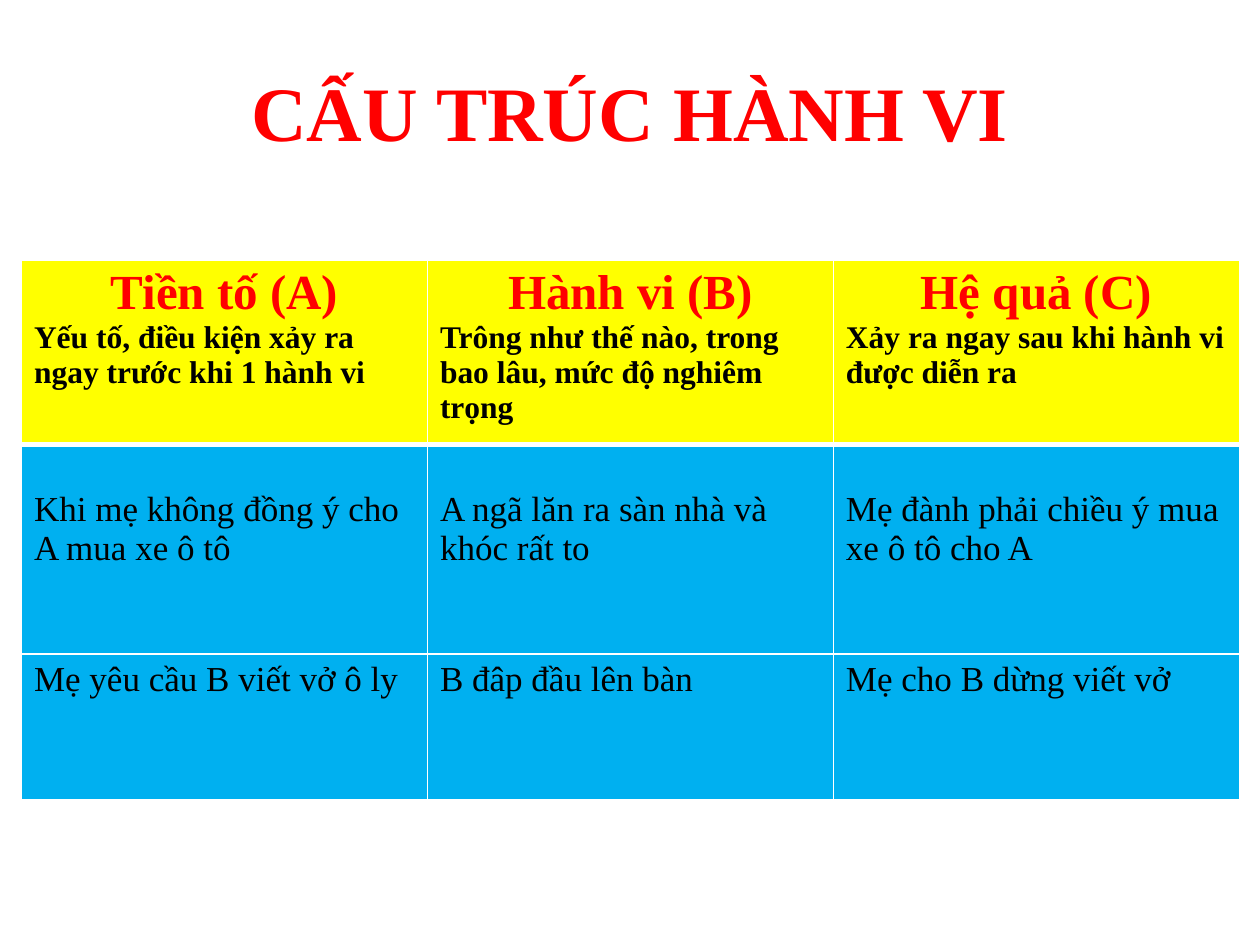
from lxml import etree
from pptx import Presentation
from pptx.dml.color import RGBColor
from pptx.enum.text import MSO_ANCHOR, PP_ALIGN
from pptx.oxml.ns import qn
from pptx.util import Pt

CENTER, LEFT = PP_ALIGN.CENTER, PP_ALIGN.LEFT
MIDDLE = MSO_ANCHOR.MIDDLE
RED, BLACK, WHITE = "FF0000", "000000", "FFFFFF"
YELLOW, BLUE = "FFFF00", "00B0F0"

HEADINGS = [
    ("Tiền tố (A)", "Yếu tố, điều kiện xảy ra ngay trước khi 1 hành vi"),
    ("Hành vi (B)", "Trông như thế nào, trong bao lâu, mức độ nghiêm trọng"),
    ("Hệ quả (C)", "Xảy ra ngay sau khi hành vi được diễn ra"),
]
EXAMPLES = [
    ["Khi mẹ không đồng ý cho A mua xe ô tô",
     "A ngã lăn ra sàn nhà và khóc rất to",
     "Mẹ đành phải chiều ý mua xe ô tô cho A"],
    ["Mẹ yêu cầu B viết vở ô ly", "B đâp đầu lên bàn", "Mẹ cho B dừng viết vở"],
]
ROW_HEIGHTS = [103.2, 119.6, 83.5]
EXAMPLE_TOP_MARGINS = [26, 3.6]


def color(value):
    return RGBColor.from_string(value)


class SlideBuilder:
    font = "Times New Roman"

    def __init__(self, slide):
        self.slide = slide

    def paragraph(self, paragraph, text, size, text_color, bold=False, align=LEFT):
        paragraph.alignment = align
        run = paragraph.add_run()
        run.text = text
        run.font.name = self.font
        run.font.size = Pt(size)
        run.font.bold = bold
        run.font.color.rgb = color(text_color)

    def title(self, text, left, top, width, height):
        box = self.slide.shapes.add_textbox(Pt(left), Pt(top), Pt(width), Pt(height))
        frame = box.text_frame
        frame.word_wrap = True
        frame.vertical_anchor = MIDDLE
        self.paragraph(frame.paragraphs[0], text, 44, RED, True, CENTER)

    def table(self, left, top, width, row_heights, columns):
        shape = self.slide.shapes.add_table(
            len(row_heights), columns, Pt(left), Pt(top), Pt(width), Pt(sum(row_heights)))
        table = shape.table
        for column in table.columns:
            column.width = Pt(width / columns)
        for row, height in zip(table.rows, row_heights):
            row.height = Pt(height)
        return table

    def cell(self, cell, fill, top_line=1, bottom_line=1):
        properties = cell._tc.get_or_add_tcPr()
        widths = {"a:lnL": 1, "a:lnR": 1, "a:lnT": top_line, "a:lnB": bottom_line}
        for tag, width in widths.items():
            line = etree.SubElement(properties, qn(tag), w=str(Pt(width)))
            solid = etree.SubElement(line, qn("a:solidFill"))
            etree.SubElement(solid, qn("a:srgbClr"), val=WHITE)
        cell.fill.solid()
        cell.fill.fore_color.rgb = color(fill)


def main():
    presentation = Presentation()
    presentation.slide_width, presentation.slide_height = Pt(720), Pt(540)
    builder = SlideBuilder(presentation.slides.add_slide(presentation.slide_layouts[6]))

    # Title
    builder.title("CẤU TRÚC HÀNH VI", 36, 18, 648, 90)

    # Table header: a heading and its explanation
    table = builder.table(12.24, 148.5, 696, ROW_HEIGHTS, len(HEADINGS))
    for column, (heading, explanation) in enumerate(HEADINGS):
        cell = table.cell(0, column)
        builder.cell(cell, YELLOW, bottom_line=3)
        frame = cell.text_frame
        builder.paragraph(frame.paragraphs[0], heading, 28, RED, True, CENTER)
        builder.paragraph(frame.add_paragraph(), explanation, 18, BLACK, True)

    # Example rows
    for row, (texts, margin) in enumerate(zip(EXAMPLES, EXAMPLE_TOP_MARGINS), start=1):
        for column, text in enumerate(texts):
            cell = table.cell(row, column)
            builder.cell(cell, BLUE, top_line=3 if row == 1 else 1)
            cell.margin_top = Pt(margin)
            builder.paragraph(cell.text_frame.paragraphs[0], text, 20, BLACK)

    presentation.save("out.pptx")


if __name__ == "__main__":
    main()
